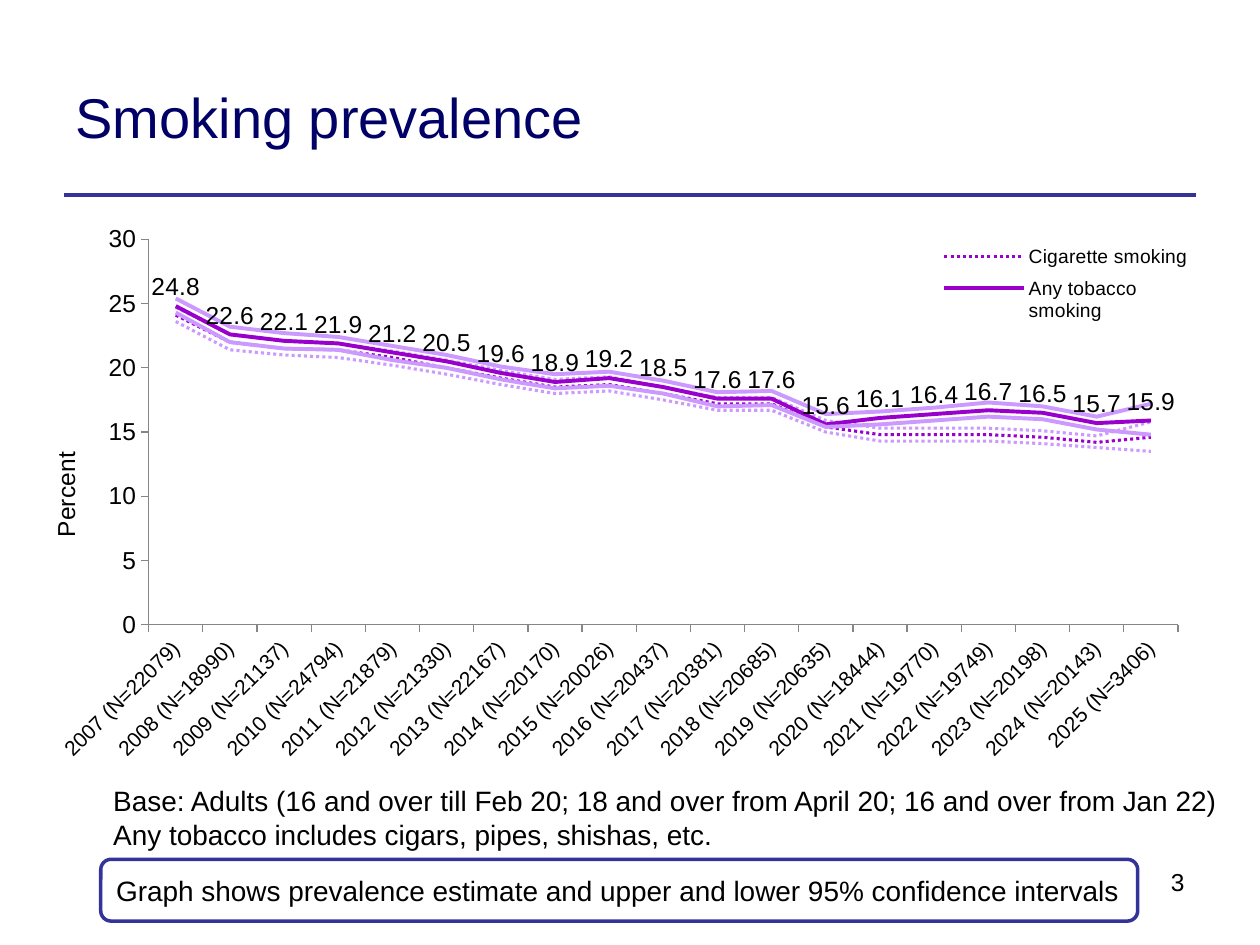
from lxml import etree
from pptx import Presentation
from pptx.chart.data import CategoryChartData
from pptx.dml.color import RGBColor
from pptx.enum import chart as ch, dml, shapes, text
from pptx.oxml.ns import qn
from pptx.util import Inches, Pt

THEME = {
    "font": "Arial", "title": "000066", "ink": "000000", "rule": "333399",
    "paper": "FFFFFF", "estimate": "9900CC", "interval": "CC99FF", "spare": "BFBFBF",
    "axis": "868686",
    "title_size": 32, "note_size": 16, "axis_size": 14, "cat_size": 12, "legend_size": 11,
}

TITLE = "Smoking prevalence"
BASE = ["Base: Adults (16 and over till Feb 20; 18 and over from April 20; 16 and over from Jan 22)",
        "Any tobacco includes cigars, pipes, shishas, etc."]
CALLOUT = "Graph shows prevalence estimate and upper and lower 95% confidence intervals"
PAGE = "3"

CHART_AT = (0.35, 1.75, 9.15, 4.66)
FIRST_YEAR = 2007
SAMPLE_SIZES = [22079, 18990, 21137, 24794, 21879, 21330, 22167, 20170, 20026, 20437,
                20381, 20685, 20635, 18444, 19770, 19749, 20198, 20143, 3406]
# name, colour key, dotted, values
SERIES = [
    ("Cigarette smoking", "estimate", True,
     [24.1, 22, 21.5, 21.4, 20.8, 20, 19.2, 18.5, 18.7, 18, 17.2, 17.2, 15.4, 14.8, 14.8, 14.8,
      14.6, 14.2, 14.6]),
    ("Series 2", "interval", True,
     [24.7, 22.6, 22.1, 21.9, 21.3, 20.6, 19.8, 19.1, 19.3, 18.5, 17.7, 17.7, 15.9, 15.3, 15.3,
      15.3, 15.1, 14.7, 15.8]),
    ("Series 3", "interval", True,
     [23.6, 21.4, 21, 20.8, 20.2, 19.5, 18.7, 18, 18.2, 17.5, 16.7, 16.7, 15, 14.3, 14.3, 14.3,
      14.1, 13.8, 13.5]),
    ("Series 4", "ink", False, [15.9]),
    ("Series 5", "spare", False, [1]),
    ("Series 6", "spare", False, [1]),
    ("Any tobacco smoking", "estimate", False,
     [24.8, 22.6, 22.1, 21.9, 21.2, 20.5, 19.6, 18.9, 19.2, 18.5, 17.6, 17.6, 15.6, 16.1, 16.4,
      16.7, 16.5, 15.7, 15.9]),
    ("Series 8", "interval", False,
     [24.3, 22, 21.5, 21.4, 20.6, 20, 19.1, 18.4, 18.6, 18, 17, 17.1, 15.4, 15.6, 15.9, 16.2,
      16, 15.2, 14.8]),
    ("Series 9", "interval", False,
     [25.4, 23.2, 22.7, 22.4, 21.7, 21, 20.1, 19.5, 19.7, 19, 18.1, 18.2, 16.4, 16.6, 16.9, 17.3,
      17, 16.2, 17.2]),
]


def rgb(key):
    return RGBColor.from_string(THEME[key])


def box(*lengths):
    return [Inches(v) for v in lengths]


def style_font(font, size, color="ink"):
    font.name, font.size, font.bold = THEME["font"], Pt(THEME[size]), False
    font.color.rgb = rgb(color)


def write(tf, lines, size="note_size", color="ink", align=text.PP_ALIGN.LEFT,
          anchor=text.MSO_ANCHOR.TOP, wrap=True):
    tf.word_wrap, tf.vertical_anchor = wrap, anchor
    for i, line in enumerate(lines):
        p = tf.paragraphs[0] if i == 0 else tf.add_paragraph()
        p.alignment = align
        r = p.add_run()
        r.text = line
        style_font(r.font, size, color)


def child(parent, tag, **attrs):
    return etree.SubElement(parent, qn(tag), attrs)


def place(parent, before, x, y, w=None, h=None, inner=False):
    """Give a chart part a manual layout, in inches from the chart's corner."""
    for old in parent.findall(qn("c:layout")):
        parent.remove(old)
    layout = etree.Element(qn("c:layout"))
    manual = child(layout, "c:manualLayout")
    if inner:
        child(manual, "c:layoutTarget", val="inner")
    for mode in ("c:xMode", "c:yMode"):
        child(manual, mode, val="edge")
    width, height = CHART_AT[2:]
    for tag, value, full in (("c:x", x, width), ("c:y", y, height),
                             ("c:w", w, width), ("c:h", h, height)):
        if value is not None:
            child(manual, tag, val=str(value / full))
    parent.find(qn(before)).addprevious(layout)


def style_axis(axis, size):
    axis.has_major_gridlines = False
    axis.major_tick_mark, axis.minor_tick_mark = ch.XL_TICK_MARK.OUTSIDE, ch.XL_TICK_MARK.NONE
    axis.format.line.color.rgb = rgb("axis")
    axis.format.line.width = Pt(0.75)
    style_font(axis.tick_labels.font, size)


def add_prevalence_chart(s):
    data = CategoryChartData(number_format="0.0")
    data.categories = [f"{FIRST_YEAR + i} (N={n})" for i, n in enumerate(SAMPLE_SIZES)]
    for name, _, _, values in SERIES:
        data.add_series(name, values)
    chart = s.shapes.add_chart(ch.XL_CHART_TYPE.LINE, *box(*CHART_AT), data).chart
    chart.has_title = False
    style_font(chart.font, "axis_size")

    plot = chart.plots[0]
    plot.vary_by_categories = False
    for series, (_, color, dotted, _) in zip(plot.series, SERIES):
        series.smooth = False
        series.marker.style = ch.XL_MARKER_STYLE.NONE
        line = series.format.line
        line.color.rgb, line.width = rgb(color), Pt(1.75 if dotted else 2.25)
        if dotted:
            line.dash_style = dml.MSO_LINE.ROUND_DOT
        elif color == "estimate":
            labels = series.data_labels
            labels.show_value, labels.position = True, ch.XL_LABEL_POSITION.ABOVE
            labels.number_format, labels.number_format_is_linked = "0.0", False
            style_font(labels.font, "axis_size")

    cats, vals = chart.category_axis, chart.value_axis
    style_axis(cats, "cat_size")
    cats._element.find(qn("c:txPr")).find(qn("a:bodyPr")).set("rot", "-2700000")
    style_axis(vals, "axis_size")
    vals.minimum_scale, vals.maximum_scale, vals.major_unit = 0, 30, 5
    vals.tick_labels.number_format, vals.tick_labels.number_format_is_linked = "0", False
    write(vals.axis_title.text_frame, ["Percent"], "axis_size")
    place(vals.axis_title._element, "c:overlay", 0.01, 1.8)

    chart.has_legend = True
    legend = chart.legend
    legend.position, legend.include_in_layout = ch.XL_LEGEND_POSITION.RIGHT, False
    style_font(legend.font, "legend_size")
    place(legend._element, "c:overlay", 7.07, 0.13, 2.08, 0.74)
    for i, (_, color, _, _) in enumerate(SERIES):
        if color != "estimate":
            entry = etree.Element(qn("c:legendEntry"))
            child(entry, "c:idx", val=str(i))
            child(entry, "c:delete", val="1")
            legend._element.find(qn("c:layout")).addprevious(entry)
    place(plot._element.getparent(), "c:lineChart", 0.83, 0.15, 8.17, 3.06, inner=True)


def main():
    prs = Presentation()
    prs.slide_width, prs.slide_height = box(10, 7.5)
    s = prs.slides.add_slide(prs.slide_layouts[5])

    rule = s.shapes.add_connector(shapes.MSO_CONNECTOR.STRAIGHT, *box(0.51, 1.55, 9.49, 1.55))
    rule.line.color.rgb, rule.line.width = rgb("rule"), Pt(2.25)
    child(rule._element.spPr, "a:effectLst")

    title = s.shapes.title
    title.left, title.top, title.width, title.height = box(0.5, 0.3, 7.89, 1.25)
    write(title.text_frame, [TITLE], "title_size", "title", anchor=text.MSO_ANCHOR.MIDDLE)

    add_prevalence_chart(s)

    page = s.shapes.add_textbox(*box(6.73, 6.83, 2.77, 0.52))
    write(page.text_frame, [PAGE], "axis_size", align=text.PP_ALIGN.RIGHT)

    callout = s.shapes.add_shape(shapes.MSO_SHAPE.ROUNDED_RECTANGLE, *box(0.8, 6.82, 8.23, 0.49))
    callout.shadow.inherit = False
    callout.fill.solid()
    callout.fill.fore_color.rgb = rgb("paper")
    callout.line.color.rgb, callout.line.width = rgb("rule"), Pt(2)
    write(callout.text_frame, [CALLOUT], anchor=text.MSO_ANCHOR.MIDDLE)

    base = s.shapes.add_textbox(*box(0.8, 6.17, 9.08, 0.64))
    write(base.text_frame, BASE, wrap=False)

    prs.save("out.pptx")


if __name__ == "__main__":
    main()
